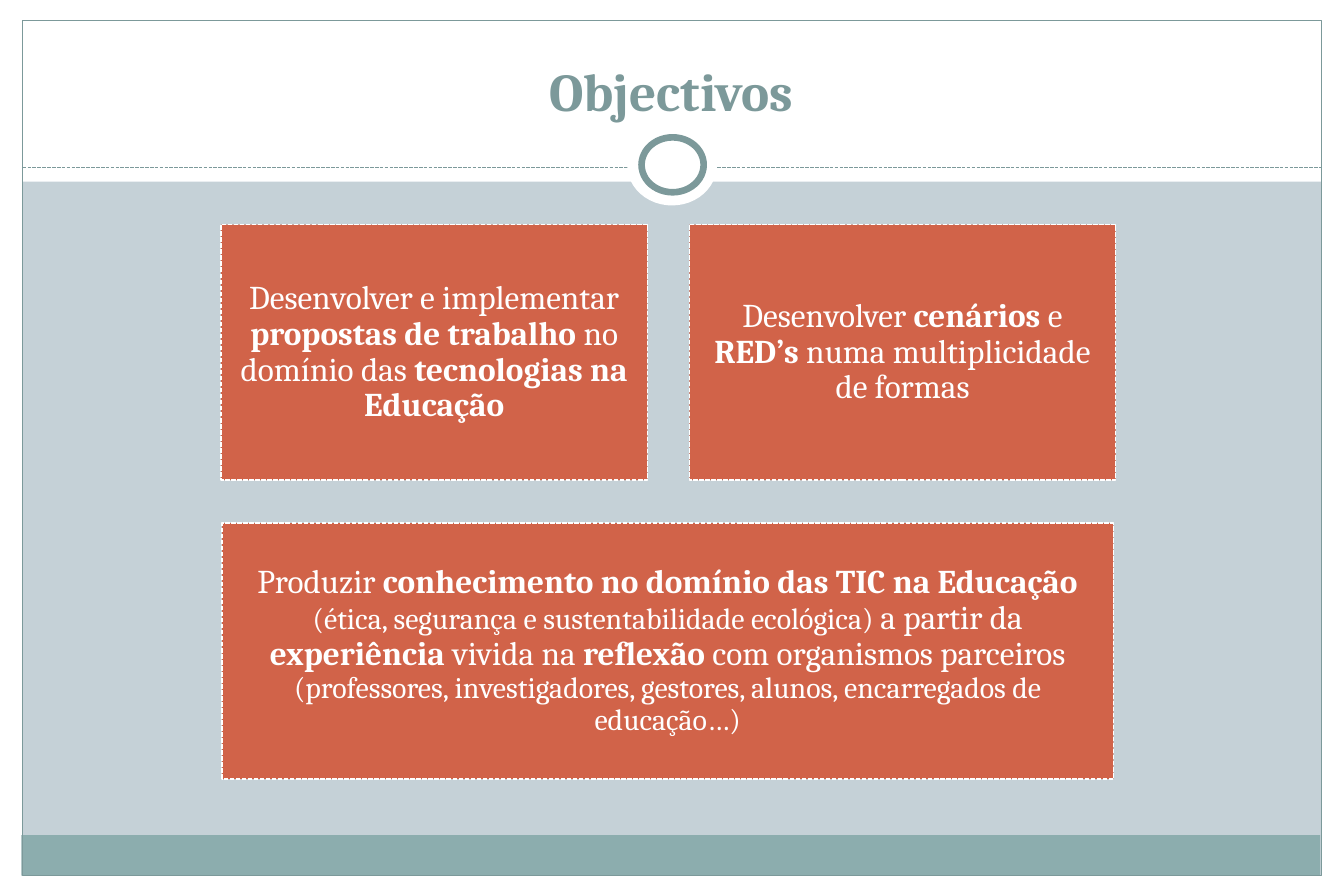
from pptx import Presentation
from pptx.dml.color import RGBColor
from pptx.enum.dml import MSO_LINE
from pptx.enum.shapes import MSO_CONNECTOR, MSO_SHAPE
from pptx.enum.text import MSO_ANCHOR, MSO_AUTO_SIZE, PP_ALIGN
from pptx.oxml.ns import qn
from pptx.util import Inches, Pt
from lxml import etree

RECT, OVAL = MSO_SHAPE.RECTANGLE, MSO_SHAPE.OVAL
DASH = MSO_LINE.SQUARE_DOT
CENTER = PP_ALIGN.CENTER
MIDDLE, BOTTOM = MSO_ANCHOR.MIDDLE, MSO_ANCHOR.BOTTOM
WHITE = RGBColor(0xFF, 0xFF, 0xFF)
MIST = RGBColor(0xC5, 0xD1, 0xD7)
TEAL = RGBColor(0x8C, 0xAD, 0xAE)
SLATE = RGBColor(0x7C, 0x99, 0x9A)
RUST = RGBColor(0xD1, 0x63, 0x49)
FONT = "Cambria"
WIDE, HIGH = 11.25, 7.5

prs = Presentation()
prs.slide_width, prs.slide_height = Inches(WIDE), Inches(HIGH)
slide = prs.slides.add_slide(prs.slide_layouts[5])
slide.background.fill.solid()
slide.background.fill.fore_color.rgb = MIST


def add_box(kind, box, fill=None, line=None, width=0.75):
    shape = slide.shapes.add_shape(kind, *[Inches(n) for n in box])
    shape.shadow.inherit = False
    if fill is None:
        shape.fill.background()
    else:
        shape.fill.solid()
        shape.fill.fore_color.rgb = fill
    if line is None:
        shape.line.fill.background()
    else:
        shape.line.color.rgb = line
        shape.line.width = Pt(width)
    return shape


# Page frame
for box in [(0, 7.33, WIDE, 0.17), (0, 0, WIDE, 1.52),
            (0, 0, 0.19, HIGH), (11.06, 0, 0.19, HIGH)]:
    add_box(RECT, box, WHITE)
add_box(RECT, (0.18, 6.99, 10.87, 0.34), TEAL)
add_box(RECT, (0.19, 0.17, 10.87, 7.16), line=SLATE)

rule = slide.shapes.add_connector(
    MSO_CONNECTOR.STRAIGHT, Inches(0.19), Inches(1.4), Inches(11.06), Inches(1.4))
rule.line.color.rgb = SLATE
rule.line.width = Pt(0.75)
rule.line.dash_style = DASH
etree.SubElement(rule._element.spPr, qn("a:effectLst"))

add_box(OVAL, (5.25, 1.05, 0.75, 0.67), WHITE)
add_box(OVAL, (5.37, 1.15, 0.52, 0.46), WHITE, SLATE, 4)

# Title, brought in front of the white band
title = slide.shapes.title
title.left, title.top = Inches(0.37), Inches(0.25)
title.width, title.height = Inches(10.5), Inches(0.83)
frame = title.text_frame
frame.text = "Objectivos"
frame.auto_size = MSO_AUTO_SIZE.NONE
frame.vertical_anchor = BOTTOM
frame.margin_left = frame.margin_right = Inches(0.11)
frame.margin_top = frame.margin_bottom = Inches(0.06)
para = frame.paragraphs[0]
para.alignment = CENTER
para.font.name, para.font.size, para.font.bold = FONT, Pt(32), True
para.font.color.rgb = SLATE
title._element.getparent().append(title._element)

# Goals: left, top, width, then runs of text, bold, size
goals = [
    (1.85, 1.88, 3.57, [
        ("Desenvolver e implementar ", False, 20),
        ("propostas de trabalho ", True, 20),
        ("no domínio das ", False, 20),
        ("tecnologias na Educação", True, 20)]),
    (5.77, 1.88, 3.57, [
        ("Desenvolver ", False, 20),
        ("cenários", True, 20),
        (" e ", False, 20),
        ("RED’s", True, 20),
        (" numa multiplicidade de formas", False, 20)]),
    (1.86, 4.38, 7.46, [
        ("Produzir ", False, 20),
        ("conhecimento no domínio das TIC na Educação ", True, 20),
        ("(ética, segurança e sustentabilidade ecológica) ", False, 18),
        ("a partir da ", False, 20),
        ("experiência", True, 20),
        (" vivida na ", False, 20),
        ("reflexão", True, 20),
        (" com organismos parceiros ", False, 20),
        ("(professores, investigadores, gestores, alunos, "
         "encarregados de educação…)", False, 18)]),
]
for left, top, width, runs in goals:
    card = add_box(RECT, (left, top, width, 2.14), RUST, WHITE, 0.9)
    card.line.dash_style = DASH
    frame = card.text_frame
    frame.word_wrap = True
    frame.vertical_anchor = MIDDLE
    frame.margin_left = frame.margin_right = Inches(0.08)
    frame.margin_top = frame.margin_bottom = Inches(0.08)
    para = frame.paragraphs[0]
    para.alignment = CENTER
    para.line_spacing = 0.9
    para.font.name = FONT
    para.font.color.rgb = WHITE
    for text, bold, size in runs:
        run = para.add_run()
        run.text = text
        run.font.bold, run.font.size = bold, Pt(size)

prs.save("out.pptx")
